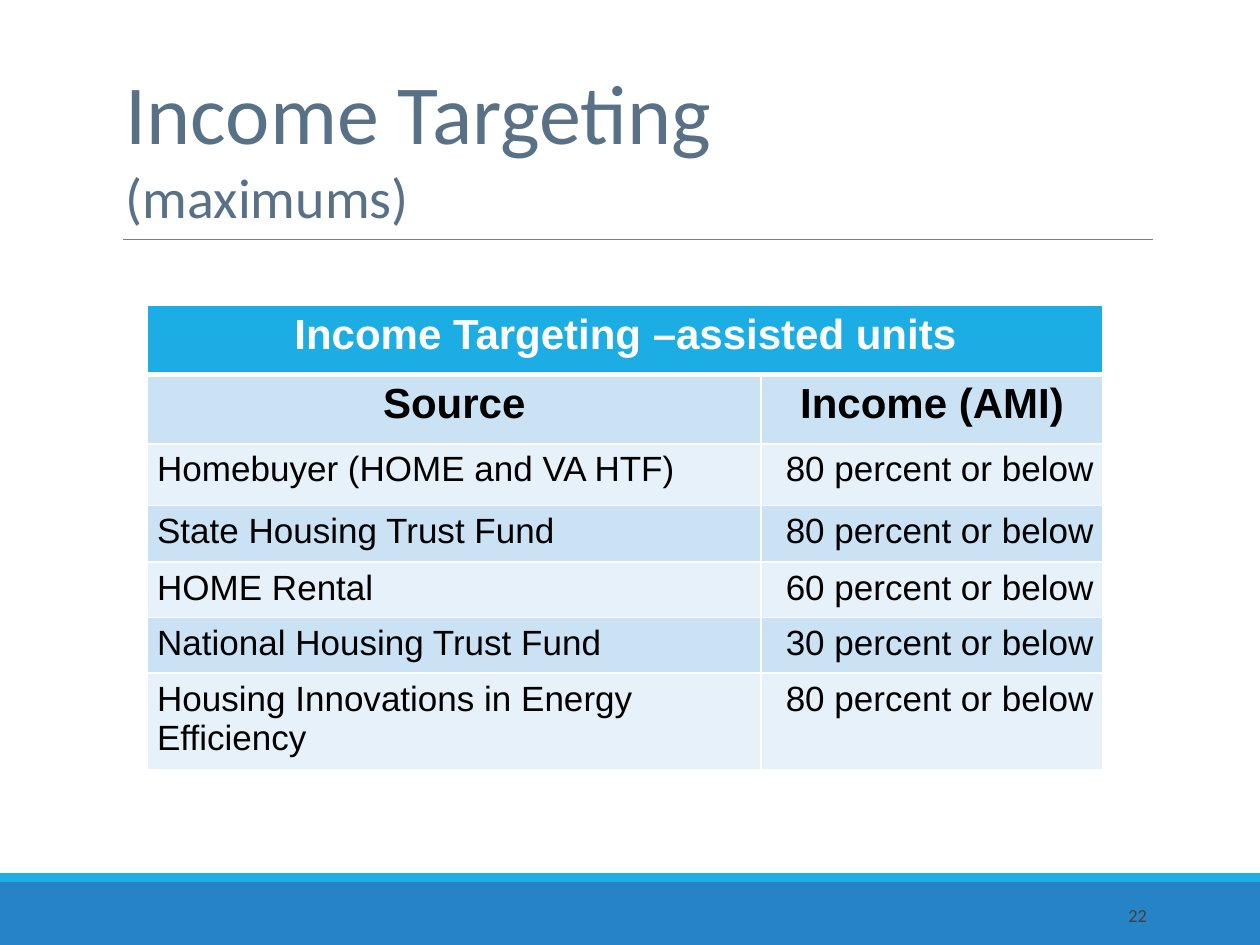
"""Build the income targeting slide with its table of maximums."""
from lxml.etree import SubElement
from pptx import Presentation
from pptx.dml.color import RGBColor
from pptx.enum.shapes import MSO_CONNECTOR as CONN, MSO_SHAPE as SHAPE
from pptx.enum.text import MSO_ANCHOR as ANCHOR, PP_ALIGN as ALIGN
from pptx.oxml.ns import qn
from pptx.util import Pt

COLORS = {
    "white": "FFFFFF", "black": "000000", "blue": "2683C6", "cyan": "1CADE4",
    "rule": "7F7F7F", "title": "587186", "number": "414141",
    "band_dark": "CBE2F5", "band_light": "E7F1FA",
}
COL_WIDTHS = (350.4, 195.6)
ROW_HEIGHTS = (39.6, 39.6, 35.3, 32.4, 31.7, 31.7, 31.7)
HEADING = "Income Targeting –assisted units"
ROWS = (
    ("Source", "Income (AMI)"),
    ("Homebuyer (HOME and VA HTF)", "80 percent or below"),
    ("State Housing Trust Fund", "80 percent or below"),
    ("HOME Rental", "60 percent or below"),
    ("National Housing Trust Fund", "30 percent or below"),
    ("Housing Innovations in Energy Efficiency", "80 percent or below"),
)


def rgb(name):
    """Return the named colour."""
    return RGBColor.from_string(COLORS[name])


def add_run(p, text, size, color, font="Calibri", bold=False):
    """Append one formatted run to a paragraph."""
    r = p.add_run()
    r.text = text
    r.font.name, r.font.size, r.font.bold = font, Pt(size), bold
    r.font.color.rgb = rgb(color)


def add_bar(s, top, height, color):
    """Add a full-width bar."""
    sp = s.shapes.add_shape(SHAPE.RECTANGLE, 0, Pt(top), Pt(720), Pt(height))
    sp.shadow.inherit = False
    sp.fill.solid()
    sp.fill.fore_color.rgb = rgb(color)
    sp.line.fill.background()


def add_rule(s, left, right, y):
    """Add a thin horizontal line."""
    line = s.shapes.add_connector(CONN.STRAIGHT, Pt(left), Pt(y), Pt(right), Pt(y))
    line.line.color.rgb = rgb("rule")
    line.line.width = Pt(0.75)
    SubElement(line._element.spPr, qn("a:effectLst"))


def add_text_box(s, left, top, width, height, anchor):
    """Add a wrapping text box and return its first paragraph."""
    sp = s.shapes.add_textbox(Pt(left), Pt(top), Pt(width), Pt(height))
    tf = sp.text_frame
    tf.word_wrap = True
    tf.vertical_anchor = anchor
    return tf.paragraphs[0]


def add_title(s):
    """Add the two-line title."""
    p = add_text_box(s, 64.8, 22.3, 594, 114.5, ANCHOR.BOTTOM)
    p.line_spacing = 0.85
    add_run(p, "Income Targeting", 48, "title")
    add_run(p, " ", 40, "title")
    p.add_line_break()
    add_run(p, "(maximums)", 32, "title")
    add_run(p, " ", 40, "title")


def set_borders(cell, top, bottom):
    """Draw white borders around a cell."""
    tc_pr = cell._tc.get_or_add_tcPr()
    for side, width in (("L", 1), ("R", 1), ("T", top), ("B", bottom)):
        ln = SubElement(tc_pr, qn(f"a:ln{side}"), w=str(Pt(width)))
        fill = SubElement(ln, qn("a:solidFill"))
        SubElement(fill, qn("a:srgbClr"), val=COLORS["white"])


def style_cell(cell, row):
    """Set the margins, borders and fill of a cell by its row."""
    cell.margin_left = cell.margin_right = Pt(5.4)
    cell.margin_top = cell.margin_bottom = Pt(3.6)
    set_borders(cell, 3 if row == 1 else 1, 3 if row == 0 else 1)
    cell.fill.solid()
    band = "band_dark" if row % 2 else "band_light"
    cell.fill.fore_color.rgb = rgb(band if row else "cyan")


def write_cell(cell, text, size, color, align, bold):
    """Write aligned text in a cell."""
    p = cell.text_frame.paragraphs[0]
    p.alignment = align
    add_run(p, text, size, color, "Arial", bold)


def add_income_table(s):
    """Add the table of income limits by source."""
    frame = s.shapes.add_table(len(ROW_HEIGHTS), len(COL_WIDTHS), Pt(84.4), Pt(174.4),
                               Pt(sum(COL_WIDTHS)), Pt(sum(ROW_HEIGHTS)))
    table = frame.table
    for column, width in zip(table.columns, COL_WIDTHS):
        column.width = Pt(width)
    for i, height in enumerate(ROW_HEIGHTS):
        table.rows[i].height = Pt(height)
        for cell in table.rows[i].cells:
            style_cell(cell, i)
    table.cell(0, 0).merge(table.cell(0, 1))
    write_cell(table.cell(0, 0), HEADING, 24, "white", ALIGN.CENTER, True)
    for i, texts in enumerate(ROWS, 1):
        head = i == 1
        for j, text in enumerate(texts):
            align = ALIGN.CENTER if head else (ALIGN.LEFT, ALIGN.RIGHT)[j]
            write_cell(table.cell(i, j), text, 24 if head else 20, "black", align, head)


def add_slide_number(s):
    """Add the slide number."""
    p = add_text_box(s, 584.6, 508.3, 77.8, 28.8, ANCHOR.MIDDLE)
    p.alignment = ALIGN.RIGHT
    add_run(p, "22", 10.5, "number")


def main():
    """Build and save the presentation."""
    prs = Presentation()
    prs.slide_width, prs.slide_height = Pt(720), Pt(540)
    s = prs.slides.add_slide(prs.slide_layouts[6])
    add_bar(s, 504, 36, "blue")
    add_bar(s, 499, 5, "cyan")
    add_rule(s, 70.5, 659, 136.8)
    add_title(s)
    add_income_table(s)
    add_slide_number(s)
    prs.save("out.pptx")


if __name__ == "__main__":
    main()
